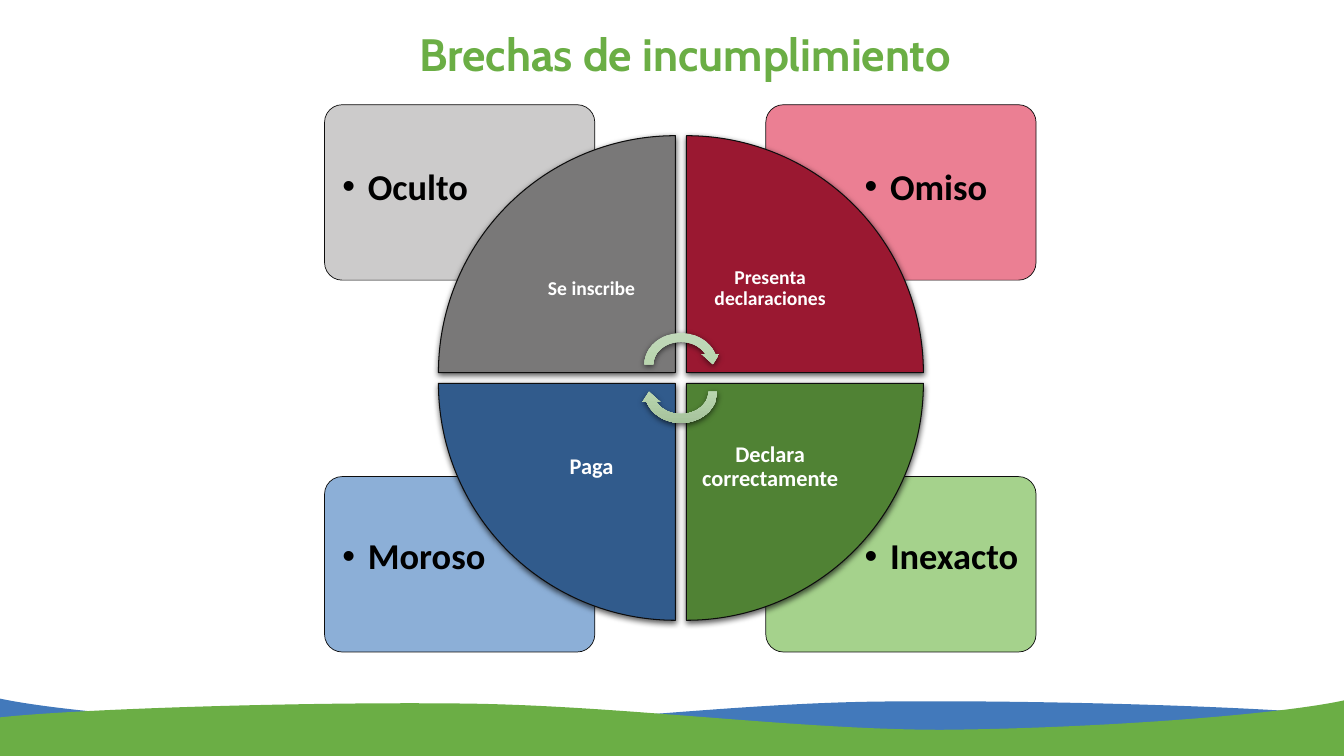
from pptx import Presentation
from pptx.dml.color import RGBColor
from pptx.enum.shapes import MSO_SHAPE
from pptx.enum.text import MSO_ANCHOR, MSO_AUTO_SIZE, PP_ALIGN
from pptx.oxml import parse_xml
from pptx.oxml.ns import nsdecls, qn
from pptx.util import Cm, Pt
from copy import deepcopy

GREEN = RGBColor(0x6B, 0xAE, 0x45)
BLUE = RGBColor(0x42, 0x79, 0xBB)
BLACK = RGBColor(0, 0, 0)
WHITE = RGBColor(0xFF, 0xFF, 0xFF)
EDGE = RGBColor(0x0D, 0x0D, 0x0D)
GREY = RGBColor(0x79, 0x78, 0x78)
RED = RGBColor(0x9A, 0x18, 0x31)
LEAF = RGBColor(0x50, 0x82, 0x34)
NAVY = RGBColor(0x31, 0x5B, 0x8C)
SILVER = RGBColor(0xC7, 0xC6, 0xC6)
PINK = RGBColor(0xE9, 0x72, 0x88)
LIME = RGBColor(0xA5, 0xD2, 0x8C)
SKY = RGBColor(0x8C, 0xAF, 0xD7)
SAGE = [RGBColor(0xC2, 0xD9, 0xBB), RGBColor(0xB9, 0xD5, 0xAF), RGBColor(0xA3, 0xC0, 0x99)]
SHADOW = (f'<a:outerShdw {nsdecls("a")} blurRad="57150" dist="19050" dir="5400000" algn="ctr" '
          'rotWithShape="0"><a:srgbClr val="000000"><a:alpha val="63000"/></a:srgbClr></a:outerShdw>')


def write(shape, text, look, face, color, align):
    frame = shape.text_frame
    for key, val in look.items():
        setattr(frame, key, val)
    para = frame.paragraphs[0]
    para.alignment = align
    para.line_spacing = 0.9
    run = para.add_run()
    run.text = text
    for key, val in face.items():
        setattr(run.font, key, val)
    run.font.color.rgb = color
    return para


def draw(kind, left, top, width, height, turn=0, cast=False):
    shape = slide.shapes.add_shape(kind, Cm(left), Cm(top), Cm(width), Cm(height))
    shape.rotation = turn
    shape.shadow.inherit = False
    if cast:
        shape._element.spPr.find(qn("a:effectLst")).append(parse_xml(SHADOW))
    return shape


prs = Presentation()
prs.slide_width, prs.slide_height = Cm(33.87), Cm(19.05)
slide = prs.slides.add_slide(prs.slide_layouts[5])

title = slide.shapes.title
title.left, title.top, title.width, title.height = Cm(10.31), Cm(0.76), Cm(14.07), Cm(1.32)
flush = dict.fromkeys(["margin_left", "margin_right", "margin_top", "margin_bottom"], 0)
write(title, "Brechas de incumplimiento",
      {**flush, "margin_right": Cm(0.15), "word_wrap": True, "auto_size": MSO_AUTO_SIZE.NONE,
       "vertical_anchor": MSO_ANCHOR.MIDDLE},
      {"name": "Cabin", "size": Pt(32.4), "bold": True}, GREEN, PP_ALIGN.CENTER)

crest = [(33.87, 18.03), (31.9, 17.81), (26.06, 17.63), (22.1, 17.68), (18.16, 17.73),
         (13.79, 18.34), (10.11, 18.34), (6.43, 18.31), (1.73, 17.98), (-0.02, 17.6)]
mirror = [(33.85 - x, y + 0.05) for x, y in crest]
for color, edge in [(BLUE, crest), (GREEN, mirror)]:
    points = [(Cm(x), Cm(y)) for x, y in edge + [(edge[-1][0], 19.05), (edge[0][0], 19.05)]]
    form = slide.shapes.build_freeform(*points[0])
    form.add_line_segments(points[1:], close=True)
    wave = form.convert_to_shape()
    lines = list(wave._element.iter(qn("a:lnTo")))
    for i in range(0, 9, 3):
        bend = parse_xml(f'<a:cubicBezTo {nsdecls("a")}/>')
        lines[i].addprevious(bend)
        for line in lines[i:i + 3]:
            bend.append(line[0])
            line.getparent().remove(line)
    wave.shadow.inherit = False
    wave.fill.solid()
    wave.fill.fore_color.rgb = color
    wave.line.fill.background()

cards = [("Inexacto", 1, 1, LIME, 100), ("Moroso", 0, 1, SKY, 100),
         ("Omiso", 1, 0, PINK, 90), ("Oculto", 0, 0, SILVER, 90)]
for text, col, row, color, alpha in cards:
    card = draw(MSO_SHAPE.ROUNDED_RECTANGLE, (8.18, 19.3)[col], (2.64, 12.01)[row], 6.81, 4.42)
    card.adjustments[0] = 0.1
    card.fill.solid()
    card.fill.fore_color.rgb = color
    if alpha < 100:
        tint = card._element.spPr.find(qn("a:solidFill"))[0]
        tint.append(parse_xml(f'<a:alpha {nsdecls("a")} val="{alpha * 1000}"/>'))
    card.line.color.rgb = EDGE
    card.line.width = Pt(0.5)
    box = slide.shapes.add_textbox(Cm((8.28, 21.44)[col]), Cm((2.72, 13.21)[row]), Cm(4.57), Cm(3.12))
    pad = {"margin_left": Cm(0.35), "margin_right": Cm(0.2), "margin_top": Cm((2.08, 0.35)[row]),
           "margin_bottom": 0}
    para = write(box, text, {**pad, "word_wrap": True},
                 {"name": "Calibri", "size": Pt(26), "bold": True}, BLACK, PP_ALIGN.LEFT)
    prop = para._p.get_or_add_pPr()
    prop.set("marL", str(Cm(0.64)))
    prop.set("indent", str(-Cm(0.64)))
    prop.append(parse_xml(f'<a:buFont {nsdecls("a")} typeface="Arial"/>'))
    prop.append(parse_xml(f'<a:buChar {nsdecls("a")} char="•"/>'))

wedges = [("Se inscribe", 0, 0, GREY, 14), ("Presenta declaraciones", 1, 0, RED, 14),
          ("Declara correctamente", 1, 1, LEAF, 16), ("Paga", 0, 1, NAVY, 16)]
for i, (text, col, row, color, size) in enumerate(wedges):
    wedge = draw(MSO_SHAPE.PIE_WEDGE, (11.05, 17.3)[col], (3.42, 9.66)[row], 5.97, 5.97, 90 * i, True)
    wedge.fill.solid()
    wedge.fill.fore_color.rgb = color
    wedge.line.color.rgb = EDGE
    wedge.line.width = Pt(0.75)
    box = slide.shapes.add_textbox(Cm((12.8, 17.3)[col]), Cm((5.17, 9.66)[row]), Cm(4.22), Cm(4.22))
    write(box, text,
          {**dict.fromkeys(flush, Cm(0.3)), "word_wrap": True, "vertical_anchor": MSO_ANCHOR.MIDDLE},
          {"name": "Calibri", "size": Pt(size), "bold": True}, WHITE, PP_ALIGN.CENTER)

for top, turn in [(8.28, 0), (8.97, 180)]:
    arrow = draw(MSO_SHAPE.CIRCULAR_ARROW, 16.13, top, 2.06, 1.8, turn, True)
    arrow.line.fill.background()
    arrow.fill.gradient()
    arrow.fill.gradient_angle = 270
    blend = arrow._element.spPr.find(qn("a:gradFill"))
    blend.set("rotWithShape", "0")
    stops = blend.find(qn("a:gsLst"))
    stops.insert(1, deepcopy(stops[0]))
    for stop, color, place in zip(arrow.fill.gradient_stops, SAGE, (0, 0.5, 1)):
        stop.color.rgb = color
        stop.position = place

prs.save("out.pptx")
